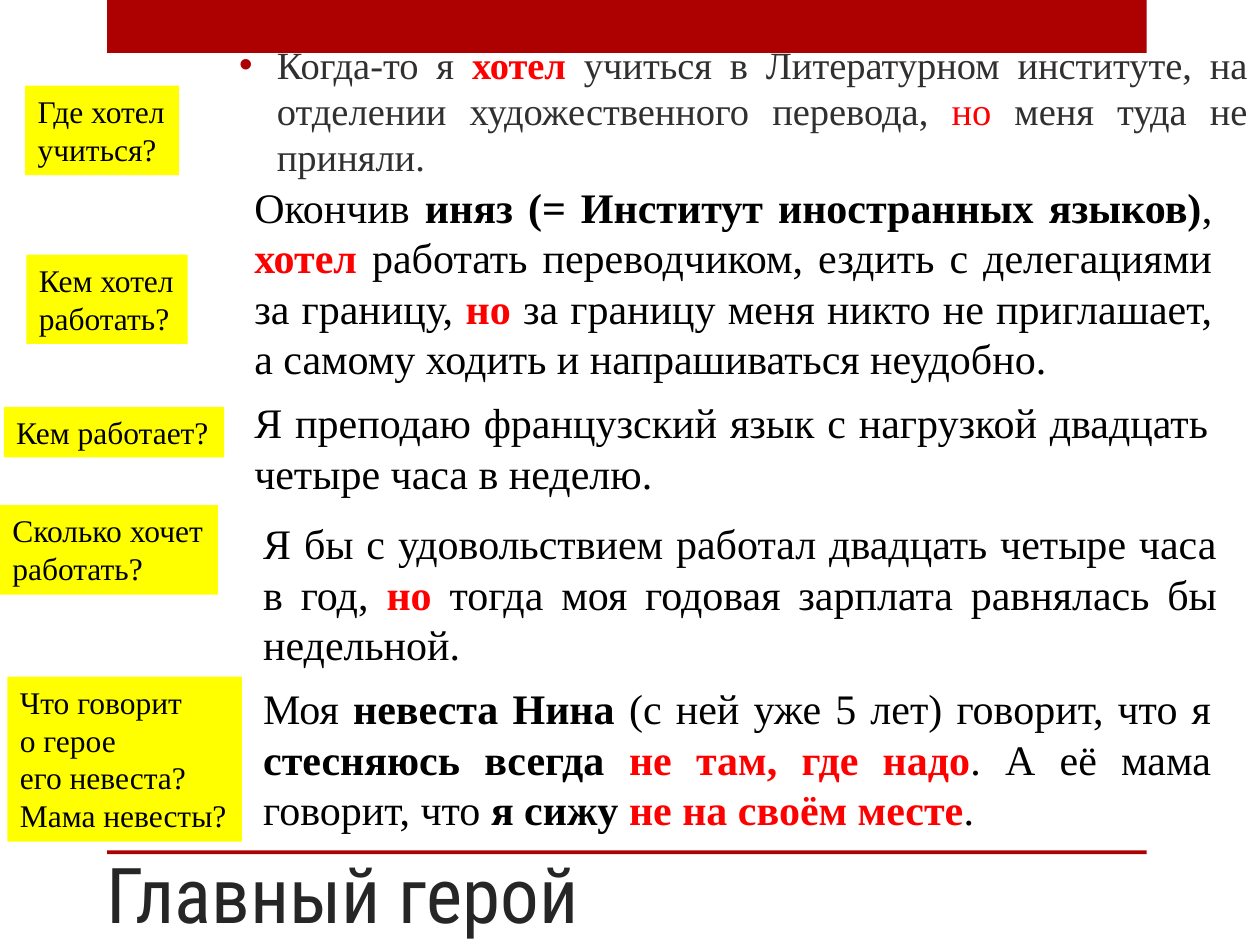
from dataclasses import dataclass

from lxml import etree
from pptx import Presentation
from pptx.dml.color import RGBColor
from pptx.enum.shapes import MSO_SHAPE
from pptx.enum.text import MSO_ANCHOR, MSO_AUTO_SIZE, PP_ALIGN
from pptx.oxml.ns import qn
from pptx.util import Inches, Pt

RECTANGLE = MSO_SHAPE.RECTANGLE
TOP, MIDDLE, BOTTOM = MSO_ANCHOR.TOP, MSO_ANCHOR.MIDDLE, MSO_ANCHOR.BOTTOM
FIT_SHAPE, NO_FIT = MSO_AUTO_SIZE.SHAPE_TO_FIT_TEXT, MSO_AUTO_SIZE.NONE
LEFT, JUSTIFY = PP_ALIGN.LEFT, PP_ALIGN.JUSTIFY

WIDTH, HEIGHT = Inches(10), Inches(7.5)
COLUMNS, ROWS = 100, 75


@dataclass(frozen=True)
class Theme:
    accent: str = "AD0101"
    label: str = "FFFF00"
    text: str = "000000"
    soft: str = "303030"
    title: str = "262626"
    stress: str = "FF0000"
    serif: str = "Times New Roman"
    heading: str = "Roboto Condensed"
    title_size: int = 44
    quote_size: int = 24
    intro_size: int = 22
    label_size: int = 18


THEME = Theme()
PLAIN = (False, False)
BOLD = (True, False)
RED = (False, True)
BOLD_RED = (True, True)

LABELS = [
    ((2, 6.8, 12.2, 7.1), ["Где хотел", "учиться?"]),
    ((2.1, 20.2, 12.8, 7.1), ["Кем хотел", "работать?"]),
    ((0.3, 32.3, 17.5, 4), ["Кем работает?"]),
    ((0, 40.1, 17.3, 7.1), ["Сколько хочет", "работать?"]),
    ((0.6, 53.7, 18.6, 13.1),
     ["Что говорит", "о герое", "его невеста?", "Мама невесты?"]),
]

INTRO = [
    ("Когда-то я ", PLAIN),
    ("хотел ", BOLD_RED),
    ("учиться в Литературном институте, на отделении "
     "художественного перевода, ", PLAIN),
    ("но ", RED),
    ("меня туда не приняли. ", PLAIN),
]

QUOTES = [
    ((19.2, 13.9, 78, 17.2), [
        ("Окончив ", PLAIN),
        ("иняз (= Институт иностранных языков)", BOLD),
        (", ", PLAIN),
        ("хотел ", BOLD_RED),
        ("работать переводчиком, ездить с делегациями за границу, ", PLAIN),
        ("но ", BOLD_RED),
        ("за границу меня никто не приглашает, "
         "а самому ходить и напрашиваться неудобно.", PLAIN),
    ]),
    ((19.2, 31, 77.7, 9.1), [
        ("Я преподаю французский язык с нагрузкой двадцать "
         "четыре часа в неделю. ", PLAIN),
    ]),
    ((19.9, 40.6, 77.7, 13.1), [
        ("Я бы с удовольствием работал двадцать четыре часа в год, ", PLAIN),
        ("но ", BOLD_RED),
        ("тогда моя годовая зарплата равнялась бы недельной.", PLAIN),
    ]),
    ((19.9, 53.7, 77.2, 13.1), [
        ("Моя ", PLAIN),
        ("невеста Нина ", BOLD),
        ("(с ней уже 5 лет) говорит, что я ", PLAIN),
        ("стесняюсь всегда ", BOLD),
        ("не там, где надо", BOLD_RED),
        (". А её мама говорит, что ", PLAIN),
        ("я сижу ", BOLD),
        ("не на своём месте", BOLD_RED),
        (".", PLAIN),
    ]),
]


def place(cells):
    column, row, columns, rows = cells
    return (round(WIDTH * column / COLUMNS), round(HEIGHT * row / ROWS),
            round(WIDTH * columns / COLUMNS), round(HEIGHT * rows / ROWS))


def rgb(color):
    return RGBColor.from_string(color)


def add_bar(page, cells, color):
    bar = page.shapes.add_shape(RECTANGLE, *place(cells))
    bar.shadow.inherit = False
    bar.fill.solid()
    bar.fill.fore_color.rgb = rgb(color)
    bar.line.fill.background()


def add_box(page, cells, anchor=TOP, wrap=True, fit=FIT_SHAPE):
    box = page.shapes.add_textbox(*place(cells))
    frame = box.text_frame
    frame.word_wrap = wrap
    frame.auto_size = fit
    frame.vertical_anchor = anchor
    return box


def style_para(para, size, color=THEME.text, font=THEME.serif, align=LEFT):
    para.alignment = align
    para.font.name = font
    para.font.size = Pt(size)
    para.font.color.rgb = rgb(color)


def add_label(page, cells, lines):
    box = add_box(page, cells, wrap=False)
    box.fill.solid()
    box.fill.fore_color.rgb = rgb(THEME.label)
    box.text_frame.text = "\n".join(lines)
    for para in box.text_frame.paragraphs:
        style_para(para, THEME.label_size)


def write_spans(para, spans, size, color):
    style_para(para, size, color, align=JUSTIFY)
    for text, (bold, red) in spans:
        span = para.add_run()
        span.text = text
        span.font.bold = bold
        span.font.color.rgb = rgb(THEME.stress if red else color)


def add_bullet(para, color, indent):
    para.space_before = Pt(0.2 * THEME.intro_size)
    properties = para._p.get_or_add_pPr()
    properties.set("marL", str(indent))
    properties.set("indent", str(-indent))
    bullet_color = etree.SubElement(properties, qn("a:buClr"))
    etree.SubElement(bullet_color, qn("a:srgbClr"), val=color)
    etree.SubElement(properties, qn("a:buFont"), typeface="Arial")
    etree.SubElement(properties, qn("a:buChar"), char="•")
    defaults = properties.find(qn("a:defRPr"))
    if defaults is not None:
        properties.append(defaults)


def add_title(page, cells, text):
    box = add_box(page, cells, anchor=BOTTOM, fit=NO_FIT)
    para = box.text_frame.paragraphs[0]
    para.text = text
    style_para(para, THEME.title_size, THEME.title, THEME.heading)


def add_intro(page, cells, spans):
    box = add_box(page, cells, anchor=MIDDLE, fit=NO_FIT)
    para = box.text_frame.paragraphs[0]
    write_spans(para, spans, THEME.intro_size, THEME.soft)
    add_bullet(para, THEME.accent, round(WIDTH * 3 / COLUMNS))


def add_quote(page, cells, spans):
    para = add_box(page, cells).text_frame.paragraphs[0]
    write_spans(para, spans, THEME.quote_size, THEME.text)


def main():
    deck = Presentation()
    deck.slide_width, deck.slide_height = WIDTH, HEIGHT
    page = deck.slides.add_slide(deck.slide_layouts[6])
    add_bar(page, (8.5, 0, 82.5, 4.2), THEME.accent)
    add_bar(page, (8.5, 67.5, 82.5, 0.3), THEME.accent)
    add_title(page, (7.5, 57.5, 74.2, 17.5), "Главный герой")
    add_intro(page, (18, 0.5, 82, 16.5), INTRO)
    for cells, lines in LABELS:
        add_label(page, cells, lines)
    for cells, spans in QUOTES:
        add_quote(page, cells, spans)
    deck.save("out.pptx")


if __name__ == "__main__":
    main()
